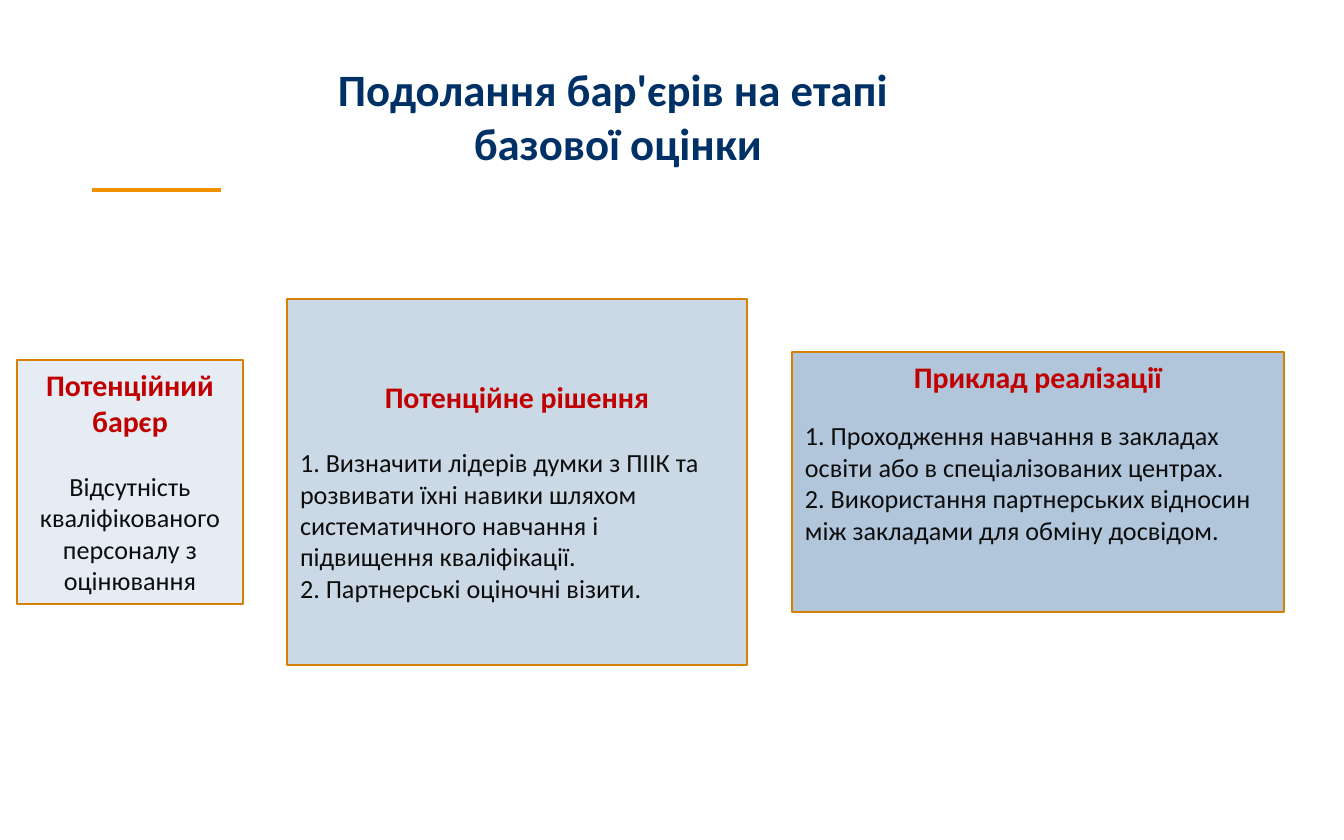
from dataclasses import dataclass

from lxml import etree
from pptx import Presentation
from pptx import util as u
from pptx.dml.color import RGBColor
from pptx.enum import shapes, text
from pptx.oxml import ns

PX_PER_INCH = 134.4
INSET_X, INSET_Y = 13, 7
FONT = "Calibri"
COLORS = {
    "title": "003166",
    "accent": "F29100",
    "border": "D48105",
    "heading": "C00000",
    "body": "0D0D0D",
    "barrier": "E5ECF3",
    "solution": "CBD9E7",
    "example": "B1C6DB",
}
CENTER, LEFT = text.PP_ALIGN.CENTER, text.PP_ALIGN.LEFT


@dataclass(frozen=True)
class Card:
    left: int
    top: int
    width: int
    height: int
    fill: str
    heading: str
    body: tuple[str, ...]
    body_align: text.PP_ALIGN = LEFT
    inset_top: int = INSET_Y
    heading_gap: float = 17  # points


CARDS = (
    Card(17, 360, 226, 244, "barrier", "Потенційний барєр",
         ("Відсутність кваліфікованого персоналу з оцінювання",),
         body_align=CENTER),
    Card(287, 299, 460, 366, "solution", "Потенційне рішення",
         ("1. Визначити лідерів думки з ПІІК та розвивати їхні навики шляхом "
          "систематичного навчання і підвищення кваліфікації.",
          "2. Партнерські оціночні візити."),
         inset_top=80),
    Card(792, 352, 492, 260, "example", "Приклад реалізації",
         ("1. Проходження навчання в закладах освіти або в спеціалізованих центрах.",
          "2. Використання партнерських відносин між закладами для обміну досвідом."),
         heading_gap=13.4),
)


def px(length: int) -> u.Emu:
    return u.Emu(round(length * u.Inches(1) / PX_PER_INCH))


def color(name: str) -> RGBColor:
    return RGBColor.from_string(COLORS[name])


def prepare_frame(frame, inset_top: int = INSET_Y) -> None:
    frame.word_wrap = True
    frame.auto_size = text.MSO_AUTO_SIZE.NONE
    frame.vertical_anchor = text.MSO_ANCHOR.TOP
    frame.margin_left = frame.margin_right = px(INSET_X)
    frame.margin_top, frame.margin_bottom = px(inset_top), px(INSET_Y)


def write(paragraph, words: str, size: int, color_name: str,
          align: text.PP_ALIGN, bold: bool = False) -> None:
    paragraph.alignment = align
    run = paragraph.add_run()
    run.text = words
    run.font.name, run.font.size, run.font.bold = FONT, u.Pt(size), bold
    run.font.color.rgb = color(color_name)


def add_title(slide, lines: tuple[str, ...]) -> None:
    frame = slide.shapes.add_textbox(px(134), px(55), px(968), px(122)).text_frame
    prepare_frame(frame)
    for index, line in enumerate(lines):
        paragraph = frame.add_paragraph() if index else frame.paragraphs[0]
        write(paragraph, line, 24, "title", CENTER, bold=True)


def add_accent_line(slide) -> None:
    line = slide.shapes.add_connector(
        shapes.MSO_CONNECTOR.STRAIGHT, px(92), px(190), px(221), px(190))
    line.line.color.rgb = color("accent")
    line.line.width = u.Pt(2)
    etree.SubElement(line._element.spPr, ns.qn("a:effectLst"))


def add_card(slide, card: Card) -> None:
    shape = slide.shapes.add_shape(
        shapes.MSO_SHAPE.RECTANGLE,
        px(card.left), px(card.top), px(card.width), px(card.height))
    shape.shadow.inherit = False
    shape.fill.solid()
    shape.fill.fore_color.rgb = color(card.fill)
    shape.line.color.rgb = color("border")
    shape.line.width = u.Pt(0.75)
    frame = shape.text_frame
    prepare_frame(frame, card.inset_top)
    heading = frame.paragraphs[0]
    heading.space_after = u.Pt(card.heading_gap)
    write(heading, card.heading, 16, "heading", CENTER, bold=True)
    for item in card.body:
        write(frame.add_paragraph(), item, 14, "body", card.body_align)


def main() -> None:
    presentation = Presentation()
    presentation.slide_width, presentation.slide_height = px(1344), px(840)
    slide = presentation.slides.add_slide(presentation.slide_layouts[6])
    add_accent_line(slide)
    add_title(slide, ("Подолання бар'єрів на етапі ", "базової оцінки"))
    for card in CARDS:
        add_card(slide, card)
    presentation.save("out.pptx")


if __name__ == "__main__":
    main()
